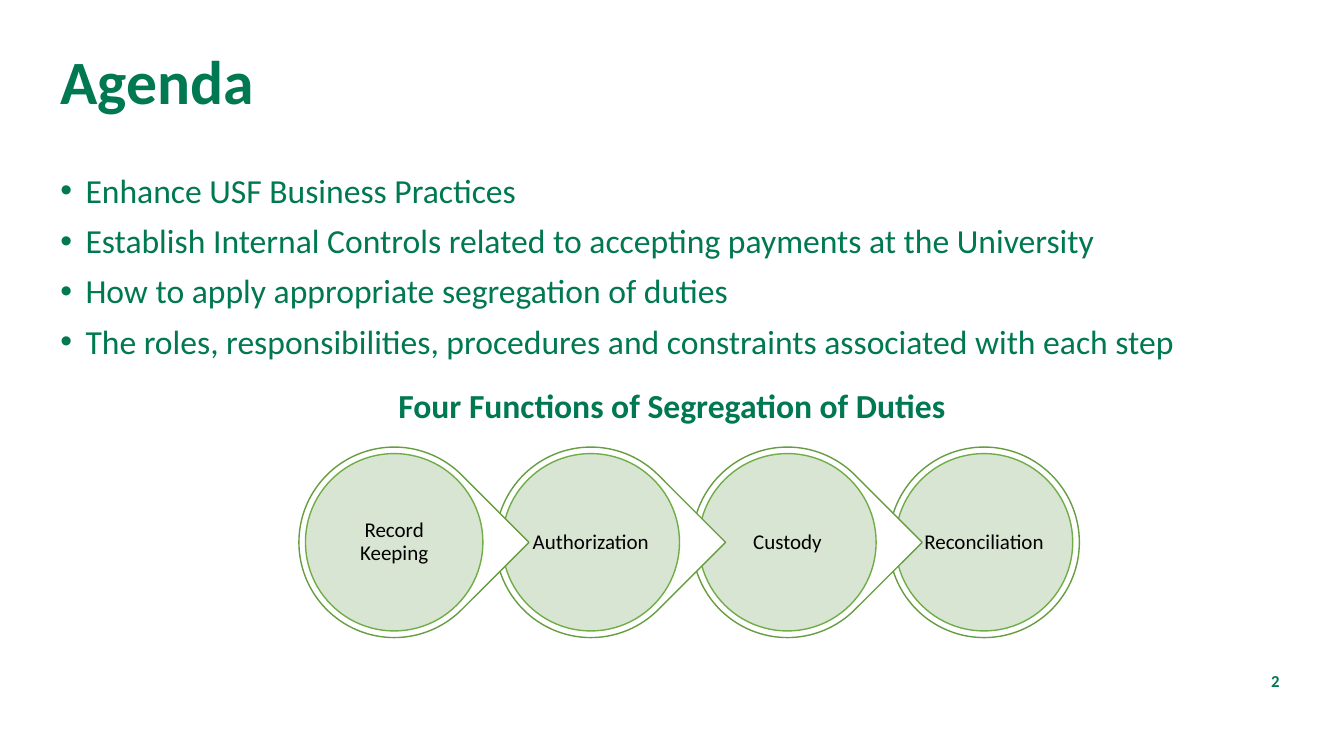
from lxml import etree
from pptx import Presentation
from pptx.dml.color import RGBColor
from pptx.enum import shapes, text
from pptx.oxml.ns import qn
from pptx.util import Inches, Pt

TITLE = "Agenda"
TOPICS = [
    "Enhance USF Business Practices",
    "Establish Internal Controls related to accepting payments at the University",
    "How to apply appropriate segregation of duties",
    "The roles, responsibilities, procedures and constraints associated with each step",
]
HEADING = "Four Functions of Segregation of Duties"
FUNCTIONS = ["Record Keeping", "Authorization", "Custody", "Reconciliation"]
PAGE = "2"
COLORS = {"green": "007851", "ring": "FFFFFF", "ring_line": "669D40",
          "disc": "D5E3CF", "disc_line": "70AD47", "label": "000000"}
FONT = "Calibri"

# Ring geometry, in inches
RING, DISC, LABEL = 1.89, 1.76, 1.26
FIRST_CENTER, PITCH, MIDDLE = 3.91, 1.95, 5.38

SHAPE = shapes.MSO_SHAPE
ALIGN = text.PP_ALIGN
ANCHOR = text.MSO_ANCHOR


def rgb(name):
    return RGBColor.from_string(COLORS[name])


def write(shape, lines, size, color="green", bold=False, align=ALIGN.LEFT,
          anchor=ANCHOR.TOP, spacing=0.9, bullets=False):
    frame = shape.text_frame
    frame.word_wrap = True
    frame.auto_size = text.MSO_AUTO_SIZE.NONE
    frame.vertical_anchor = anchor
    frame.text = "\n".join(lines)
    for i, line in enumerate(frame.paragraphs):
        if bullets:
            props = line._p.get_or_add_pPr()
            props.set("marL", str(Inches(0.25)))
            props.set("indent", str(-Inches(0.25)))
            etree.SubElement(props, qn("a:buFont")).set("typeface", "Arial")
            etree.SubElement(props, qn("a:buChar")).set("char", "•")
        line.alignment = align
        line.line_spacing = spacing
        line.space_before = Pt(10 if i else 0)
        line.font.name = FONT
        line.font.size = Pt(size)
        line.font.bold = bold
        line.font.color.rgb = rgb(color)


def add_text(slide, box, lines, size, **style):
    shape = slide.shapes.add_textbox(*map(Inches, box))
    write(shape, lines, size, **style)
    return shape


def centered(x, size):
    return x - size / 2, MIDDLE - size / 2, size, size


def add_round(slide, kind, x, size, color):
    shape = slide.shapes.add_shape(kind, *map(Inches, centered(x, size)))
    shape.shadow.inherit = False
    shape.fill.solid()
    shape.fill.fore_color.rgb = rgb(color)
    shape.line.color.rgb = rgb(color + "_line")
    shape.line.width = Pt(1)
    return shape


def add_function(slide, name, x, is_last):
    ring = add_round(slide, SHAPE.OVAL if is_last else SHAPE.TEAR, x, RING, "ring")
    if not is_last:
        ring.rotation = 45  # turns the tip to the right
    disc = add_round(slide, SHAPE.OVAL, x, DISC, "disc")
    fill_color = disc.fill._xPr.find(qn("a:solidFill"))[0]
    etree.SubElement(fill_color, qn("a:alpha")).set("val", "90000")
    label = add_text(slide, centered(x, LABEL), [name], 15, color="label",
                     align=ALIGN.CENTER, anchor=ANCHOR.MIDDLE)
    frame = label.text_frame
    frame.margin_left = frame.margin_right = Inches(0.02)
    frame.margin_top = frame.margin_bottom = Inches(0.02)


def main():
    deck = Presentation()
    deck.slide_width, deck.slide_height = Inches(13.33), Inches(7.5)
    slide = deck.slides.add_slide(deck.slide_layouts[5])

    title = slide.shapes.title
    title.left, title.top = Inches(0.5), Inches(0.46)
    title.width, title.height = Inches(12.29), Inches(0.85)
    write(title, [TITLE], 44, bold=True)

    add_text(slide, (0.5, 1.68, 12, 1.94), TOPICS, 24, bullets=True)
    add_text(slide, (11.86, 6.61, 0.93, 0.29), [PAGE], 12, bold=True,
             align=ALIGN.RIGHT, anchor=ANCHOR.MIDDLE, spacing=1.0)
    add_text(slide, (3.65, 3.81, 6.03, 0.55), [HEADING], 24, bold=True,
             align=ALIGN.CENTER)

    # Right to left, so that each tip lies over the next ring
    last = len(FUNCTIONS) - 1
    for i in range(last, -1, -1):
        add_function(slide, FUNCTIONS[i], FIRST_CENTER + i * PITCH, i == last)

    deck.save("out.pptx")


if __name__ == "__main__":
    main()
